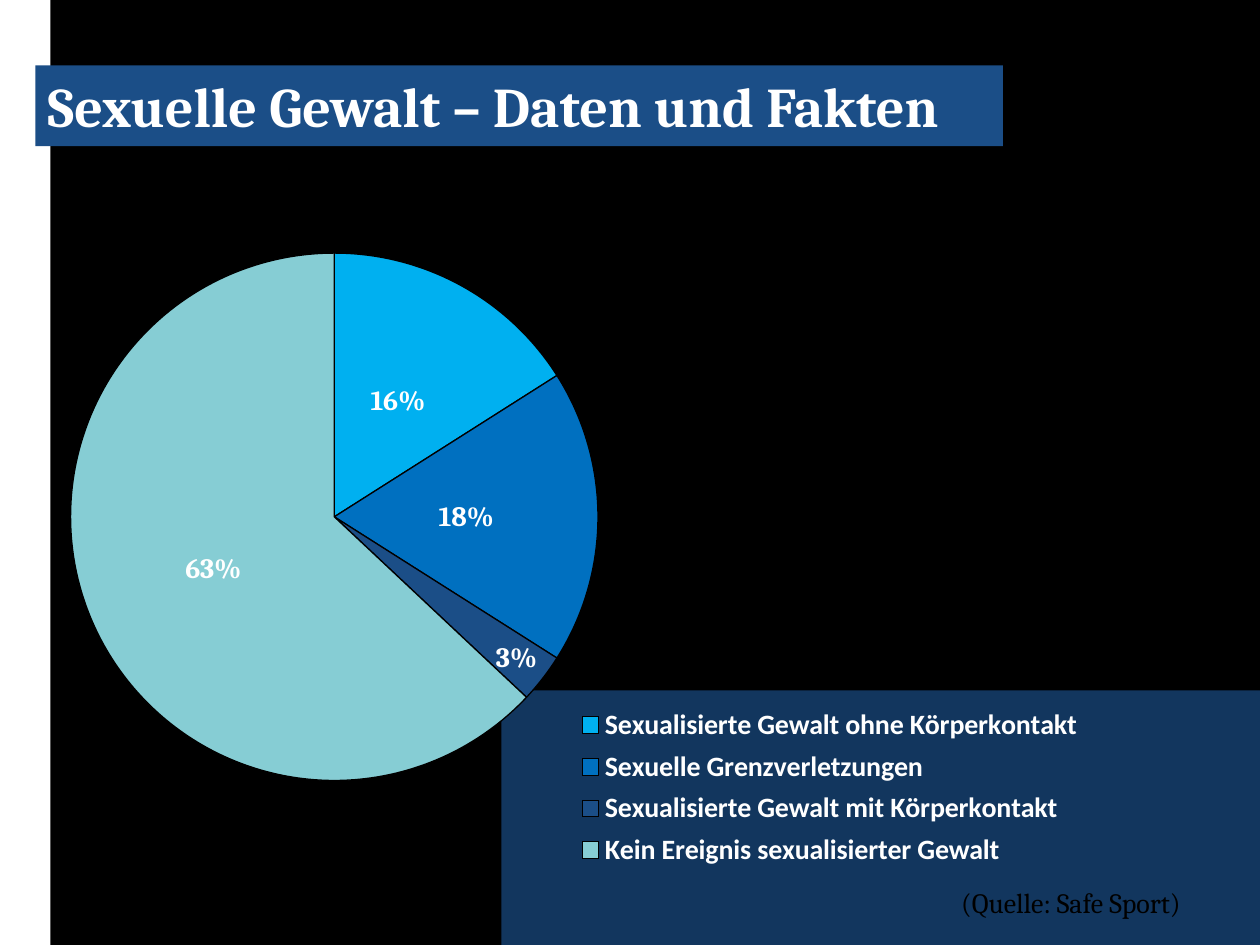
"""Build a slide with a pie chart on sexual violence in sport."""
from dataclasses import dataclass
from typing import Any, Optional

import lxml.etree
import pptx
import pptx.chart.data
import pptx.dml.color
import pptx.enum.chart
import pptx.enum.shapes
import pptx.enum.text
import pptx.oxml.ns
import pptx.util

WIDTH, HEIGHT = pptx.util.Inches(10), pptx.util.Inches(7.5)
COLUMNS, ROWS = 100, 75


@dataclass(frozen=True)
class Theme:
    black: str = "000000"
    white: str = "FFFFFF"
    navy: str = "1B4E87"
    heading_font: str = "Cambria"
    body_font: str = "Calibri"
    heading_size: int = 32
    body_size: int = 16


@dataclass(frozen=True)
class Area:
    column: float
    row: float
    columns: float
    rows: float

    def lengths(self) -> tuple[int, int, int, int]:
        return (int(WIDTH * self.column / COLUMNS), int(HEIGHT * self.row / ROWS),
                int(WIDTH * self.columns / COLUMNS), int(HEIGHT * self.rows / ROWS))


@dataclass(frozen=True)
class Panel:
    area: Area
    color: str
    opacity: Optional[int] = None


@dataclass(frozen=True)
class Slice:
    label: str
    share: float
    color: str


THEME = Theme()
STRIP = Panel(Area(0, 0, 4, 75), THEME.white)
LEGEND_PANEL = Panel(Area(39.8, 54.8, 116.5, 22.8), THEME.navy, 70)
TITLE_PANEL = Panel(Area(2.8, 5.2, 76.8, 6.4), THEME.navy)
CHART_AREA = Area(3.5, 19.4, 86.6, 57.5)
SOURCE_AREA = Area(74.4, 69.8, 22.8, 3.9)
PLOT_SHARES = {"x": 0.003, "y": 0.012, "w": 0.526, "h": 0.728}
LEGEND_SHARES = {"x": 0.47, "y": 0.63, "w": 0.5, "h": 0.24}
SLICES = (
    Slice("Sexualisierte Gewalt ohne Körperkontakt", 0.16, "00B0F0"),
    Slice("Sexuelle Grenzverletzungen", 0.18, "0070C0"),
    Slice("Sexualisierte Gewalt mit Körperkontakt", 0.03, THEME.navy),
    Slice("Kein Ereignis sexualisierter Gewalt", 0.63, "86CDD4"),
)
NARROW_SLICE = 2


def rgb(color: str) -> pptx.dml.color.RGBColor:
    """Turn a hex string into a colour."""
    return pptx.dml.color.RGBColor.from_string(color)


def style_font(font: Any, color: str, name: str, size: int, bold: bool) -> None:
    """Apply one set of format values to a font."""
    values = {"name": name, "size": pptx.util.Pt(size), "bold": bold}
    for attribute, value in values.items():
        setattr(font, attribute, value)
    font.color.rgb = rgb(color)


def draw_panel(page: Any, panel: Panel) -> Any:
    """Draw a plain filled rectangle."""
    shape = page.shapes.add_shape(pptx.enum.shapes.MSO_SHAPE.RECTANGLE, *panel.area.lengths())
    shape.shadow.inherit = False
    shape.fill.solid()
    shape.fill.fore_color.rgb = rgb(panel.color)
    shape.line.fill.background()
    if panel.opacity is not None:
        color = shape.fill._xPr.find(".//" + pptx.oxml.ns.qn("a:srgbClr"))
        alpha = lxml.etree.SubElement(color, pptx.oxml.ns.qn("a:alpha"))
        alpha.set("val", str(panel.opacity * 1000))
    return shape


def write_text(box: Any, text: str, color: str, size: int, bold: bool, indent: float = 0) -> None:
    """Write one left-aligned line in the heading font."""
    frame = box.text_frame
    settings = {"word_wrap": True, "vertical_anchor": pptx.enum.text.MSO_ANCHOR.TOP}
    for attribute, value in settings.items():
        setattr(frame, attribute, value)
    para = frame.paragraphs[0]
    para.alignment = pptx.enum.text.PP_ALIGN.LEFT
    if indent:
        properties = para._p.get_or_add_pPr()
        properties.set("marL", str(pptx.util.Inches(indent)))
        properties.set("indent", "0")
    span = para.add_run()
    span.text = text
    style_font(span.font, color, THEME.heading_font, size, bold)


def place_manually(element: Any, shares: dict[str, float], inner: bool, after: str) -> None:
    """Give a chart part a fixed place as shares of the chart."""
    qn = pptx.oxml.ns.qn
    for old in element.findall(qn("c:layout")):
        element.remove(old)
    layout = lxml.etree.Element(qn("c:layout"))
    manual = lxml.etree.SubElement(layout, qn("c:manualLayout"))
    entries = {"layoutTarget": "inner"} if inner else {}
    entries |= {"xMode": "edge", "yMode": "edge"}
    entries |= {name: str(share) for name, share in shares.items()}
    for name, value in entries.items():
        lxml.etree.SubElement(manual, qn("c:" + name)).set("val", value)
    anchor = element.find(qn(after)) if after else None
    element.insert(0 if anchor is None else element.index(anchor) + 1, layout)


def draw_pie(page: Any) -> None:
    """Draw the pie chart with its legend and value labels."""
    data = pptx.chart.data.CategoryChartData(number_format="0%")
    data.categories = [part.label for part in SLICES]
    data.add_series("Series 1", [part.share for part in SLICES])
    chart = page.shapes.add_chart(
        pptx.enum.chart.XL_CHART_TYPE.PIE, *CHART_AREA.lengths(), data).chart
    style_font(chart.font, THEME.white, THEME.body_font, THEME.body_size, True)
    chart.has_title = False
    chart.has_legend = True
    chart.legend.position = pptx.enum.chart.XL_LEGEND_POSITION.BOTTOM
    chart.legend.include_in_layout = False
    style_font(chart.legend.font, THEME.white, THEME.body_font, THEME.body_size, True)
    plot = chart.plots[0]
    plot.vary_by_categories = True
    series = plot.series[0]
    for index, part in enumerate(SLICES):
        point_format = series.points[index].format
        point_format.fill.solid()
        point_format.fill.fore_color.rgb = rgb(part.color)
        point_format.line.color.rgb = rgb(THEME.black)
        point_format.line.width = pptx.util.Pt(0.75)
    labels = series.data_labels
    settings = {"show_value": True, "show_percentage": False, "show_legend_key": False,
                "number_format": "0%", "number_format_is_linked": False,
                "position": pptx.enum.chart.XL_LABEL_POSITION.CENTER}
    for attribute, value in settings.items():
        setattr(labels, attribute, value)
    narrow_label = series.points[NARROW_SLICE].data_label
    narrow_label.position = pptx.enum.chart.XL_LABEL_POSITION.INSIDE_END
    for label in (labels, narrow_label):
        style_font(label.font, THEME.white, THEME.heading_font, THEME.body_size, True)
    place_manually(chart._chartSpace.chart.plotArea, PLOT_SHARES, True, "")
    place_manually(chart.legend._element, LEGEND_SHARES, False, "c:legendPos")


def main() -> None:
    """Build and save the deck."""
    deck = pptx.Presentation()
    deck.slide_width, deck.slide_height = WIDTH, HEIGHT
    page = deck.slides.add_slide(deck.slide_layouts[6])
    page.background.fill.solid()
    page.background.fill.fore_color.rgb = rgb(THEME.black)
    draw_panel(page, STRIP)
    draw_panel(page, LEGEND_PANEL)
    draw_pie(page)
    source = page.shapes.add_textbox(*SOURCE_AREA.lengths())
    write_text(source, "(Quelle: Safe Sport)", THEME.black, THEME.body_size, False, 0.09)
    title = draw_panel(page, TITLE_PANEL)
    write_text(title, "Sexuelle Gewalt – Daten und Fakten", THEME.white, THEME.heading_size, True)
    deck.save("out.pptx")


if __name__ == "__main__":
    main()
